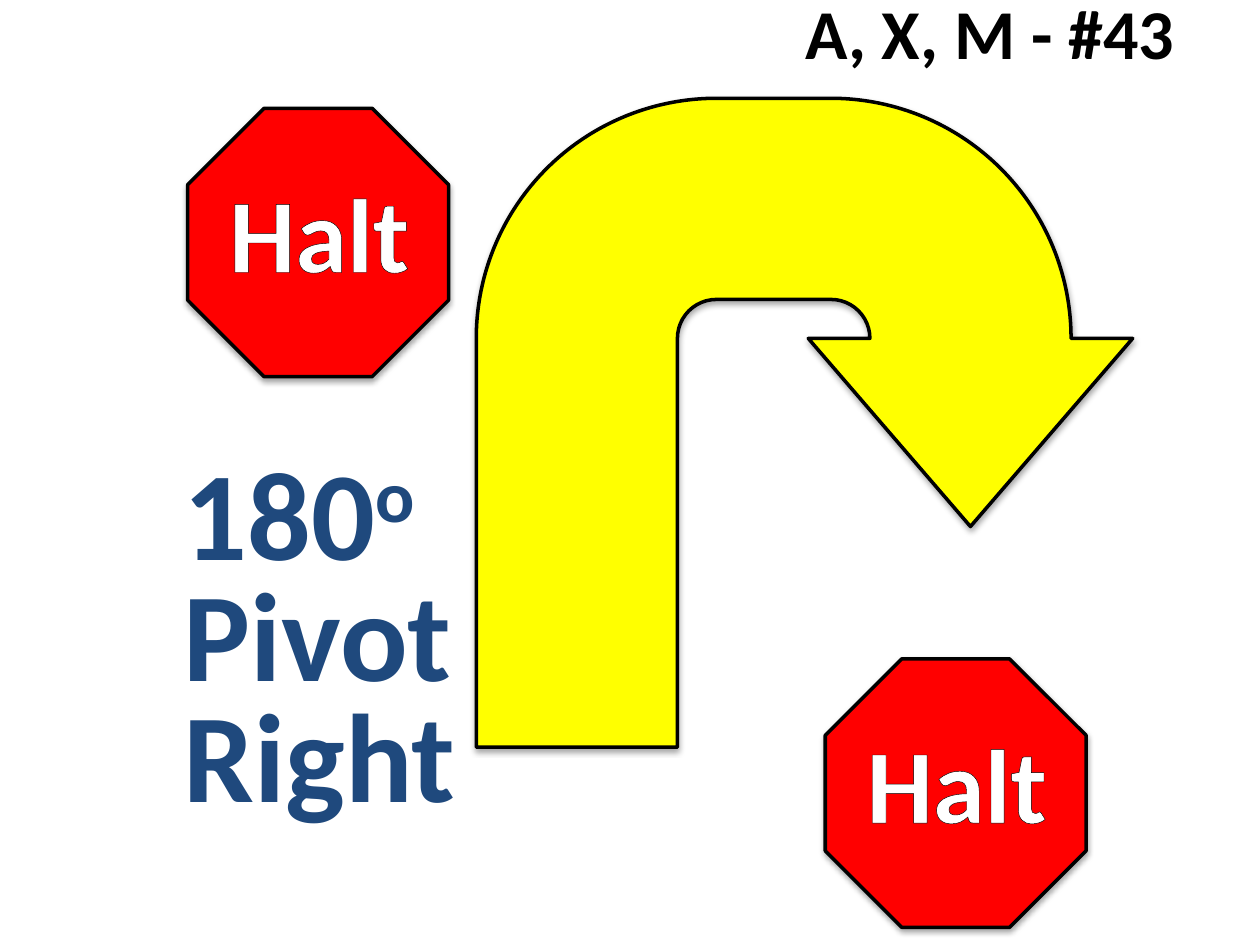
from lxml import etree
from pptx import Presentation
from pptx.dml.color import RGBColor
from pptx.enum import shapes as sh, text as tx
from pptx.oxml.ns import qn
from pptx.util import Inches, Pt

BLACK = RGBColor(0x00, 0x00, 0x00)
WHITE = RGBColor(0xFF, 0xFF, 0xFF)
RED = RGBColor(0xFF, 0x00, 0x00)
YELLOW = RGBColor(0xFF, 0xFF, 0x00)
NAVY = RGBColor(0x1F, 0x49, 0x7D)


class Card:
    """Style and current slide of a course sign."""
    font = "Calibri"
    edge = Pt(2)

    def __init__(self, slide):
        self.slide = slide

    def run(self, para, words, size, color, edged=False, raised=False):
        run = para.add_run()
        run.text = words
        font = run.font
        font.name, font.size, font.bold = self.font, Pt(size), True
        font.color.rgb = color
        props = run._r.get_or_add_rPr()
        if raised:
            props.set("baseline", "30000")
        if edged:  # thin black outline around the letters
            line = etree.Element(qn("a:ln"), w=str(Pt(0.83)))
            fill = etree.SubElement(line, qn("a:solidFill"))
            etree.SubElement(fill, qn("a:srgbClr"), val=str(BLACK))
            props.insert(0, line)

    def title(self, words, size, *box):
        title = self.slide.shapes.title
        title.left, title.top, title.width, title.height = map(Inches, box)
        frame = title.text_frame
        frame.word_wrap = False
        frame.auto_size = tx.MSO_AUTO_SIZE.NONE
        frame.vertical_anchor = tx.MSO_ANCHOR.TOP
        para = frame.paragraphs[0]
        para.alignment = tx.PP_ALIGN.RIGHT
        self.run(para, words, size, BLACK)

    def text(self, lines, size, color, *box, space=None, home=None):
        """Each line is a list of (words, raised) runs."""
        home = home or self.slide.shapes
        frame = home.add_textbox(*map(Inches, box)).text_frame
        frame.word_wrap = True
        for i, line in enumerate(lines):
            para = frame.add_paragraph() if i else frame.paragraphs[0]
            para.line_spacing = space
            for words, raised in line:
                self.run(para, words, size, color, True, raised)

    def shape(self, kind, color, *box, home=None):
        """The theme's soft shadow is kept on purpose."""
        home = home or self.slide.shapes
        shape = home.add_shape(kind, *map(Inches, box))
        shape.fill.solid()
        shape.fill.fore_color.rgb = color
        shape.line.color.rgb = BLACK
        shape.line.width = self.edge
        return shape

    def halt(self, left, top):
        home = self.slide.shapes.add_group_shape().shapes
        self.shape(sh.MSO_SHAPE.OCTAGON, RED, left, top, 2.07, 2.13, home=home)
        self.text([[("Halt", False)]], 60, WHITE,
                  left + 0.23, top + 0.42, 1.69, 1.11, home=home)

    def turn(self, ratios, *box):
        arrow = self.shape(sh.MSO_SHAPE.U_TURN_ARROW, YELLOW, *box)
        for i, ratio in enumerate(ratios):
            arrow.adjustments[i] = ratio


def main():
    deck = Presentation()
    deck.slide_width, deck.slide_height = Inches(10), Inches(7.5)
    card = Card(deck.slides.add_slide(deck.slide_layouts[5]))

    # Class and sign number
    card.title("A, X, M - #43", 40, 6.26, -0.13, 3.16, 0.77)

    # Name of the exercise
    card.text([[("180", False), ("o", True)],
               [("Pivot", False)],
               [("Right", False)]],
              72, NAVY, 1.36, 3.63, 2.39, 3.05, space=0.8)

    # Stop signs at start and end
    for left, top in ((1.49, 0.86), (6.55, 5.23)):
        card.halt(left, top)

    # Direction of the pivot
    card.turn((0.31, 0.25, 0.29, 0.38, 0.66), 3.78, 0.78, 5.21, 5.15)

    deck.save("out.pptx")


if __name__ == "__main__":
    main()
